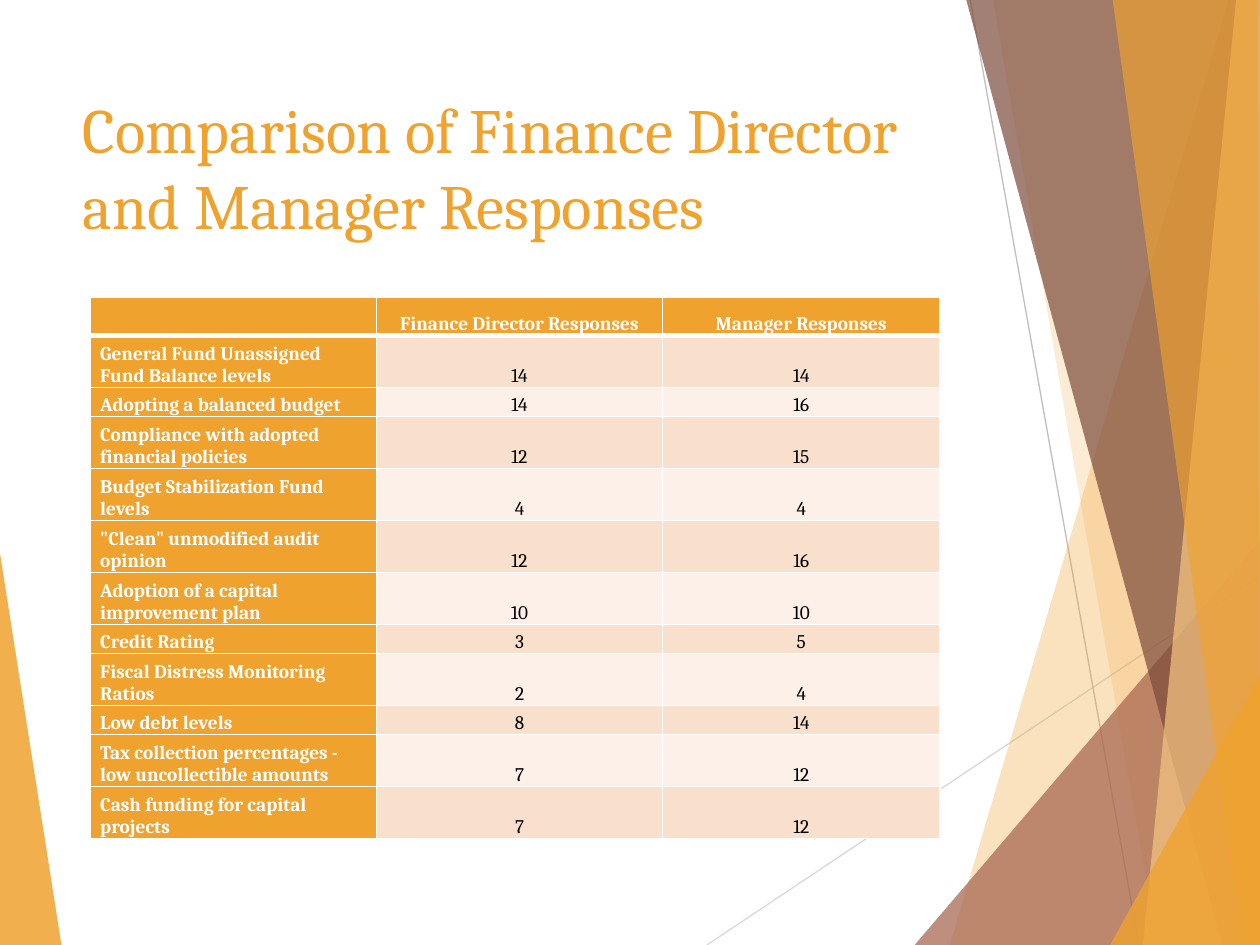
"""Builds a slide comparing finance director and manager survey responses."""
import pptx
import pptx.dml.color
import pptx.enum.shapes
import pptx.enum.text
import pptx.oxml
import pptx.oxml.ns
import pptx.util
from pptx.util import Cm

FONT = "Cambria"
AMBER = "F0A22E"
WHITE = "FFFFFF"
BANDS = ("F9E0CD", "FCF0E8")
RIGHT, BOTTOM = 25.4, 19.05

RAYS = [
    ([("0", "11.15"), ("1.24", "19.05"), ("0", "19.05")], AMBER, 85),
]
RAYS = [
    ([(0, 11.15), (1.24, BOTTOM), (0, BOTTOM)], AMBER, 85),
    ([(24.77, 0), (19.15, BOTTOM), (RIGHT, BOTTOM), (RIGHT, 0)], AMBER, 30),
    ([(20.02, 0), (23.34, BOTTOM), (RIGHT, BOTTOM), (RIGHT, 0)], AMBER, 20),
    ([(18.44, BOTTOM), (RIGHT, 10.9), (RIGHT, BOTTOM)], "A5644E", 72),
    ([(19.48, 0), (24.64, BOTTOM), (RIGHT, BOTTOM), (RIGHT, 0)], "7C4B3B", 70),
    ([(24.92, 0), (23.04, BOTTOM), (RIGHT, BOTTOM), (RIGHT, 0)], "F6C782", 70),
    ([(22.43, 0), (25.04, BOTTOM), (RIGHT, BOTTOM), (25.35, 0)], AMBER, 65),
    ([(22.38, BOTTOM), (RIGHT, 13.59), (RIGHT, BOTTOM)], AMBER, 80),
]
HAIRLINES = [
    ((14.25, BOTTOM), (RIGHT, 11.61), "D9D9D9"),
    ((19.56, 0), (22.96, BOTTOM), "BFBFBF"),
]
HEADINGS = ("", "Finance Director Responses", "Manager Responses")
RESPONSES = [
    ("General Fund Unassigned Fund Balance levels", 14, 14),
    ("Adopting a balanced budget", 14, 16),
    ("Compliance with adopted financial policies", 12, 15),
    ("Budget Stabilization Fund levels", 4, 4),
    ('"Clean" unmodified audit opinion', 12, 16),
    ("Adoption of a capital improvement plan", 10, 10),
    ("Credit Rating", 3, 5),
    ("Fiscal Distress Monitoring Ratios", 2, 4),
    ("Low debt levels", 8, 14),
    ("Tax collection percentages - low uncollectible amounts", 7, 12),
    ("Cash funding for capital projects", 7, 12),
]
COLUMN_WIDTHS = (5.77, 5.77, 5.59)
ONE_LINE, TWO_LINES = 0.58, 1.05
ONE_LINE_LETTERS = 26


def rgb(code):
    return pptx.dml.color.RGBColor.from_string(code)


def write(frame, text, size, color, bold=False, centered=False):
    paragraph = frame.paragraphs[0]
    align = pptx.enum.text.PP_ALIGN
    paragraph.alignment = align.CENTER if centered else align.LEFT
    run = paragraph.add_run()
    run.text = text
    run.font.name = FONT
    run.font.size = pptx.util.Pt(size)
    run.font.bold = bold
    run.font.color.rgb = rgb(color)


def add_ray(slide, corners, color, opacity):
    start, *others = [(Cm(x), Cm(y)) for x, y in corners]
    builder = slide.shapes.build_freeform(*start)
    builder.add_line_segments(others, close=True)
    ray = builder.convert_to_shape()
    ray.shadow.inherit = False
    ray.line.fill.background()
    ray.fill.solid()
    ray.fill.fore_color.rgb = rgb(color)
    tint = ray.fill._xPr.find(".//" + pptx.oxml.ns.qn("a:srgbClr"))
    alpha = pptx.oxml.parse_xml(
        f'<a:alpha {pptx.oxml.ns.nsdecls("a")} val="{opacity * 1000}"/>')
    tint.append(alpha)


def add_hairline(slide, start, end, color):
    hairline = slide.shapes.add_connector(
        pptx.enum.shapes.MSO_CONNECTOR.STRAIGHT, *map(Cm, start + end))
    hairline.line.color.rgb = rgb(color)
    hairline.line.width = pptx.util.Pt(0.75)
    hairline._element.spPr.append(
        pptx.oxml.parse_xml(f'<a:effectLst {pptx.oxml.ns.nsdecls("a")}/>'))


def add_title(slide, text):
    title = slide.shapes.add_textbox(Cm(1.42), Cm(1.7), Cm(17.9), Cm(3.66))
    title.text_frame.word_wrap = True
    write(title.text_frame, text, size=36, color=AMBER)


def set_borders(cell, bottom_points):
    properties = cell._tc.get_or_add_tcPr()
    widths = {"lnL": 1, "lnR": 1, "lnT": 1, "lnB": bottom_points}
    for place, (side, points) in enumerate(widths.items()):
        properties.insert(place, pptx.oxml.parse_xml(
            f'<a:{side} {pptx.oxml.ns.nsdecls("a")} w="{points * 12700}">'
            f'<a:solidFill><a:srgbClr val="{WHITE}"/></a:solidFill></a:{side}>'))


def fill_cell(cell, text, fill, bottom_points=1, **style):
    cell.margin_left = cell.margin_right = Cm(0.2)
    cell.margin_top = cell.margin_bottom = 0
    cell.vertical_anchor = pptx.enum.text.MSO_ANCHOR.BOTTOM
    cell.fill.solid()
    cell.fill.fore_color.rgb = rgb(fill)
    set_borders(cell, bottom_points)
    write(cell.text_frame, text, size=11, **style)


def add_responses(slide):
    rows = [HEADINGS] + RESPONSES
    heights = [ONE_LINE if len(row[0]) <= ONE_LINE_LETTERS else TWO_LINES
               for row in rows]
    responses = slide.shapes.add_table(
        len(rows), len(HEADINGS), Cm(1.82), Cm(6),
        Cm(sum(COLUMN_WIDTHS)), Cm(sum(heights))).table
    for column, width in zip(responses.columns, COLUMN_WIDTHS):
        column.width = Cm(width)
    for r, (row, height) in enumerate(zip(rows, heights)):
        responses.rows[r].height = Cm(height)
        for c, value in enumerate(row):
            heading = r == 0 or c == 0
            fill_cell(
                responses.cell(r, c), str(value),
                fill=AMBER if heading else BANDS[(r - 1) % 2],
                bottom_points=3 if r == 0 else 1,
                color=WHITE if heading else "000000",
                bold=heading, centered=c > 0)


def main():
    deck = pptx.Presentation()
    deck.slide_width, deck.slide_height = Cm(RIGHT), Cm(BOTTOM)
    slide = deck.slides.add_slide(deck.slide_layouts[6])
    for hairline in HAIRLINES:
        add_hairline(slide, *hairline)
    for ray in RAYS:
        add_ray(slide, *ray)
    add_title(slide, "Comparison of Finance Director and Manager Responses")
    add_responses(slide)
    deck.save("out.pptx")


if __name__ == "__main__":
    main()
